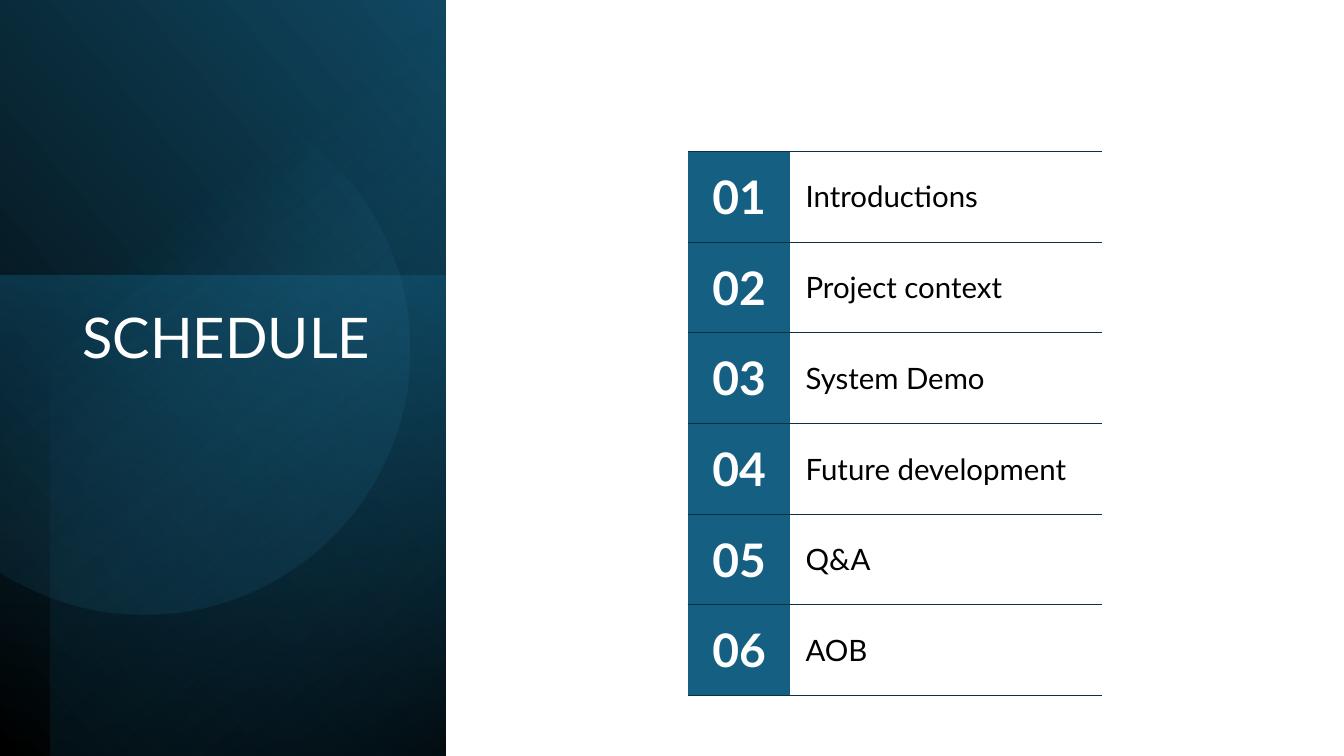
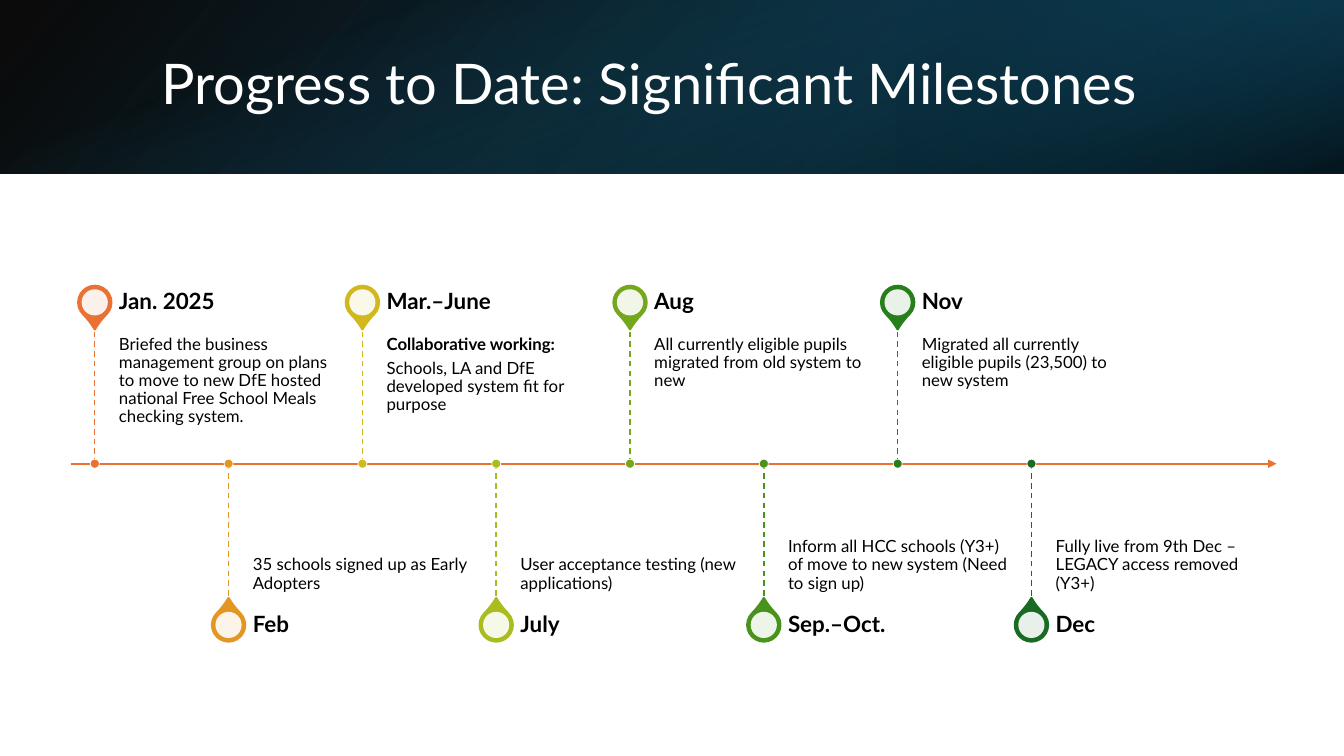
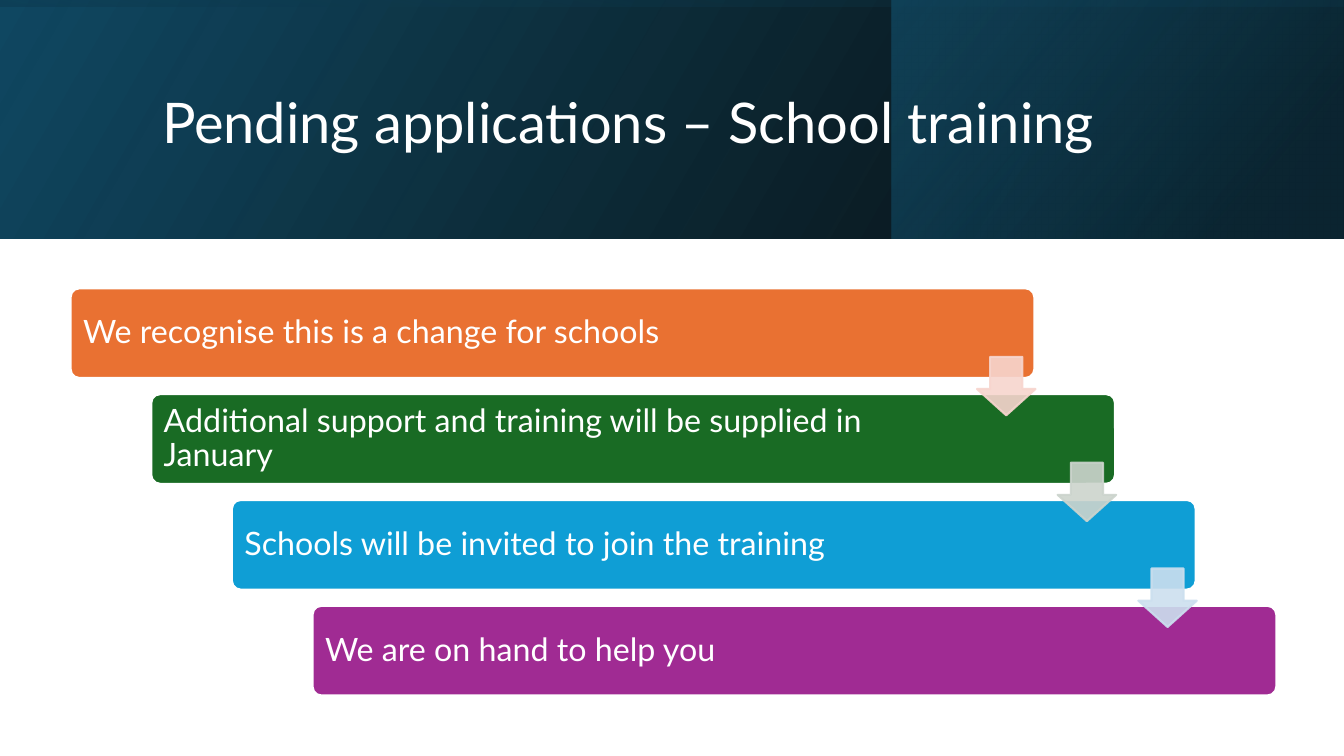
from dataclasses import dataclass

from pptx import Presentation
from pptx.dml.color import RGBColor
from pptx.enum.dml import MSO_LINE
from pptx.enum.shapes import MSO_CONNECTOR, MSO_SHAPE
from pptx.enum.text import MSO_ANCHOR, PP_ALIGN
from pptx.oxml.ns import qn
from pptx.oxml.xmlchemy import OxmlElement
from pptx.util import Inches, Pt


@dataclass(frozen=True)
class Theme:
    font: str = "Lato"
    white: str = "FFFFFF"
    black: str = "000000"
    navy: str = "104862"
    deep: str = "0B3041"
    teal: str = "156082"
    sky: str = "46B1E1"
    orange: str = "E97132"
    green: str = "196B24"
    blue: str = "0F9ED5"
    purple: str = "A02B93"
    title: int = 40
    number: int = 33
    step: int = 23
    agenda: int = 21
    month: int = 16
    note: int = 12


THEME = Theme()
SLIDE_W, SLIDE_H = 13.33, 7.5

AGENDA = ["Introductions", "Project context", "System Demo",
          "Future development", "Q&A", "AOB"]

# Month, colour, lead line (may be empty), note
MILESTONES = [
    ("Jan. 2025", THEME.orange, "", "Briefed the business management group on plans to move "
     "to new DfE hosted national Free School Meals checking system."),
    ("Feb", "E49622", "", "35 schools signed up as Early Adopters"),
    ("Mar.–June", "D2B81E", "Collaborative working:",
     "Schools, LA and DfE developed system fit for purpose"),
    ("July", "ABBC1E", "", "User acceptance testing (new applications)"),
    ("Aug", "75A71D", "", "All currently eligible pupils migrated from old system to new"),
    ("Sep.–Oct.", "49931D", "",
     "Inform all HCC schools (Y3+) of move to new system (Need to sign up)"),
    ("Nov", "277F1B", "", "Migrated all currently eligible pupils (23,500) to new system"),
    ("Dec", THEME.green, "", "Fully live from 9th Dec – LEGACY access removed (Y3+)"),
]

# Message, bar colour, colour of the arrow to the next bar
STEPS = [
    ("We recognise this is a change for schools", THEME.orange, "F7D5CE"),
    ("Additional support and training will be supplied in January", THEME.green, "CCD4CD"),
    ("Schools will be invited to join the training", THEME.blue, "CCDFEF"),
    ("We are on hand to help you", THEME.purple, None),
]


def rgb(color):
    return RGBColor.from_string(color)


def set_alpha(color_element, percent):
    alpha = OxmlElement("a:alpha")
    alpha.set("val", str(percent * 1000))
    color_element.append(alpha)


# Shapes and lines
def add_shape(slide, kind, box, fill=None, line=None, width=1.5, opacity=100):
    shape = slide.shapes.add_shape(kind, *map(Inches, box))
    shape.shadow.inherit = False
    if fill:
        shape.fill.solid()
        shape.fill.fore_color.rgb = rgb(fill)
    if line:
        shape.line.color.rgb = rgb(line)
        shape.line.width = Pt(width)
    else:
        shape.line.fill.background()
    if opacity < 100:
        for color in shape._element.spPr.iter(qn("a:srgbClr")):
            set_alpha(color, opacity)
    return shape


def add_centred(slide, kind, x, y, size, fill, **style):
    return add_shape(slide, kind, (x - size / 2, y - size / 2, size, size), fill, **style)


def add_glow(slide, box, stops, angle, turn=0, flip=False, kind=MSO_SHAPE.RECTANGLE):
    """Two-stop gradient; box is the area covered once the shape is turned."""
    left, top, width, height = box
    if turn % 180 == 90:
        left, top = left + (width - height) / 2, top + (height - width) / 2
        width, height = height, width
    glow = add_shape(slide, kind, (left, top, width, height))
    glow.rotation = turn
    if flip:
        glow._element.spPr.find(qn("a:xfrm")).set("flipH", "1")
    glow.fill.gradient()
    glow.fill.gradient_angle = 360 - angle
    for stop, (position, color, _) in zip(glow.fill.gradient_stops, stops):
        stop.position = position / 100
        stop.color.rgb = rgb(color)
    colors = glow._element.spPr.findall(".//" + qn("a:srgbClr"))
    for element, (_, _, opacity) in zip(colors, stops):
        set_alpha(element, opacity)
    return glow


def add_line(slide, start, end, color, width, dashed=False, arrow=False):
    line = slide.shapes.add_connector(MSO_CONNECTOR.STRAIGHT, *map(Inches, start + end))
    line.line.color.rgb = rgb(color)
    line.line.width = Pt(width)
    if dashed:
        line.line.dash_style = MSO_LINE.DASH
    if arrow:
        head = OxmlElement("a:tailEnd")
        head.set("type", "triangle")
        line.line._get_or_add_ln().append(head)
    line._element.spPr.append(OxmlElement("a:effectLst"))


# Text
def style_paragraph(paragraph, text, size, color, bold=False, align=PP_ALIGN.LEFT):
    paragraph.text = text
    paragraph.alignment = align
    paragraph.font.name = THEME.font
    paragraph.font.size = Pt(size)
    paragraph.font.bold = bold
    paragraph.font.color.rgb = rgb(color)


def set_margins(holder, margins):
    (holder.margin_left, holder.margin_top,
     holder.margin_right, holder.margin_bottom) = map(Inches, margins)


def write(frame, lines, size, color, anchor, margins, after=0.35):
    """Fill a frame with (text, bold) lines; after is a share of the type size."""
    frame.word_wrap = True
    frame.vertical_anchor = anchor
    set_margins(frame, margins)
    for index, (text, bold) in enumerate(lines):
        paragraph = frame.add_paragraph() if index else frame.paragraphs[0]
        style_paragraph(paragraph, text, size, color, bold)
        paragraph.line_spacing = 0.9
        paragraph.space_after = Pt(after * size)


def add_text(slide, box, *args, **options):
    write(slide.shapes.add_textbox(*map(Inches, box)).text_frame, *args, **options)


def add_title(slide, text, box, anchor=MSO_ANCHOR.MIDDLE):
    add_text(slide, box, [(text, False)], THEME.title, THEME.white, anchor,
             (0.1, 0.05, 0.1, 0.05), after=0)


# Agenda table
def rule_cell(cell):
    properties = cell._tc.get_or_add_tcPr()
    for side in ("L", "R", "T", "B"):
        border = OxmlElement("a:ln" + side)
        properties.append(border)
        if side in "LR":
            border.append(OxmlElement("a:noFill"))
            continue
        border.set("w", str(Pt(0.5)))
        fill, color = OxmlElement("a:solidFill"), OxmlElement("a:srgbClr")
        color.set("val", THEME.deep)
        fill.append(color)
        border.append(fill)


def add_agenda(slide, topics, first, top):
    row_height, widths = 0.9, (1.02, 3.09)
    table = slide.shapes.add_table(
        len(topics), 2, Inches(6.82), Inches(top),
        Inches(sum(widths)), Inches(row_height * len(topics))).table
    table.first_row = table.horz_banding = False
    for column, width in zip(table.columns, widths):
        column.width = Inches(width)
    for row, topic in enumerate(topics):
        number, name = table.cell(row, 0), table.cell(row, 1)
        for cell in (number, name):
            rule_cell(cell)
            cell.vertical_anchor = MSO_ANCHOR.MIDDLE
            set_margins(cell, (0.15,) * 4)
        number.fill.solid()
        number.fill.fore_color.rgb = rgb(THEME.teal)
        name.fill.background()
        style_paragraph(number.text_frame.paragraphs[0], f"{first + row:02}",
                        THEME.number, THEME.white, True, PP_ALIGN.CENTER)
        style_paragraph(name.text_frame.paragraphs[0], topic, THEME.agenda, THEME.black)


# Timeline
def add_milestone(slide, x, axis, above, month, color, lead, note):
    side = -1 if above else 1
    pin_y, stem_end = axis + side * 1.6, axis + side * 1.35
    pin = add_centred(slide, MSO_SHAPE.TEAR, x, pin_y, 0.33, color, line=color)
    pin.adjustments[0] = 1.15
    pin.rotation = 135 if above else 315
    add_centred(slide, MSO_SHAPE.OVAL, x, pin_y, 0.26, THEME.white, opacity=90)

    text_left, text_width, note_height = x + 0.24, 2.19, 1.36
    lines = [(lead, True)] if lead else []
    note_top = axis - note_height + 0.01 if above else axis
    add_text(slide, (text_left, note_top, text_width, note_height),
             lines + [(note, False)], THEME.note, THEME.black,
             MSO_ANCHOR.TOP if above else MSO_ANCHOR.BOTTOM,
             (0, 0.08, 0.08, 0.12) if above else (0, 0.12, 0, 0.08))
    add_text(slide, (text_left, pin_y - 0.24, text_width, 0.48), [(month, True)],
             THEME.month, THEME.black, MSO_ANCHOR.MIDDLE, (0, 0, 0.11, 0))

    add_line(slide, (x, axis), (x, stem_end), color, 1, dashed=True)
    add_centred(slide, MSO_SHAPE.OVAL, x, axis, 0.09, color, line=THEME.white, width=0.5)


# Slides
def build_schedule(slide):
    panel = 4.42
    add_glow(slide, (0, 0, panel, SLIDE_H),
             [(0, THEME.black, 100), (100, THEME.navy, 100)], 310, 90, True)
    add_glow(slide, (0, 2.73, panel, 4.77),
             [(0, THEME.teal, 50), (100, THEME.deep, 0)], 190, 270)
    add_glow(slide, (0.5, 0, panel - 0.5, SLIDE_H),
             [(0, THEME.black, 59), (69, THEME.teal, 0)], 220, 270, True)
    # Disc cut off along the slide edge; angles are in units of 0.6 per degree
    disc = add_glow(slide, (-1.2, 0.84, 5.26, 5.26),
                    [(39, THEME.sky, 0), (100, THEME.navy, 26)], 52, kind=MSO_SHAPE.CHORD)
    cut = 123
    disc.adjustments[0] = (360 - cut) * 0.6
    disc.adjustments[1] = cut * 0.6
    add_title(slide, "SCHEDULE", (0.72, 3.03, 3.15, 3.36), MSO_ANCHOR.TOP)
    add_agenda(slide, AGENDA[:5], 1, 1.5)
    add_agenda(slide, AGENDA[5:], 6, 6)


def build_milestones(slide):
    band = 1.72
    add_glow(slide, (0, 0, SLIDE_W, band),
             [(0, THEME.black, 96), (100, THEME.navy, 100)], 140, flip=True)
    add_glow(slide, (8.89, 0, 4.44, band),
             [(19, THEME.deep, 68), (100, THEME.teal, 79)], 320, 180, True)
    add_glow(slide, (0, 0, SLIDE_W, band),
             [(23, THEME.teal, 0), (99, THEME.black, 74)], 340, 90)
    add_title(slide, "Progress to Date: Significant Milestones", (1.5, 0.38, 10.98, 0.96))

    axis, first, last = 4.6, 0.94, 10.23
    pitch = (last - first) / (len(MILESTONES) - 1)
    add_line(slide, (0.7, axis), (12.66, axis), THEME.orange, 1.5, arrow=True)
    for index, milestone in enumerate(MILESTONES):
        add_milestone(slide, first + index * pitch, axis, index % 2 == 0, *milestone)


def build_training(slide):
    band = 2.37
    add_glow(slide, (0, 0, SLIDE_W, band),
             [(0, THEME.black, 96), (100, THEME.navy, 100)], 330, flip=True)
    add_glow(slide, (8.84, 0, 4.48, band),
             [(19, THEME.deep, 68), (100, THEME.teal, 48)], 320, flip=True)
    add_glow(slide, (0, 0, SLIDE_W, band),
             [(23, THEME.navy, 16), (99, THEME.black, 45)], 350, 270, True)
    add_title(slide, "Pending applications – School training", (1.51, 0.38, 10.63, 1.72))

    shift, drop = 0.8, 1.05
    for index, (message, color, _) in enumerate(STEPS):
        bar = add_shape(slide, MSO_SHAPE.ROUNDED_RECTANGLE,
                        (0.7 + index * shift, 2.86 + index * drop, 9.56, 0.89),
                        color, THEME.white)
        bar.adjustments[0] = 0.1
        write(bar.text_frame, [(message, False)], THEME.step, THEME.white,
              MSO_ANCHOR.MIDDLE, (0.1, 0.1, 1.47, 0.1))
    for index, (_, _, tint) in enumerate(STEPS[:-1]):
        arrow = add_shape(slide, MSO_SHAPE.DOWN_ARROW,
                          (9.69 + index * shift, 3.54 + index * drop, 0.58, 0.58),
                          tint, tint, opacity=90)
        arrow.adjustments[0], arrow.adjustments[1] = 0.55, 0.45


def main():
    deck = Presentation()
    deck.slide_width, deck.slide_height = Inches(SLIDE_W), Inches(SLIDE_H)
    for build in (build_schedule, build_milestones, build_training):
        build(deck.slides.add_slide(deck.slide_layouts[6]))
    deck.save("out.pptx")


if __name__ == "__main__":
    main()
